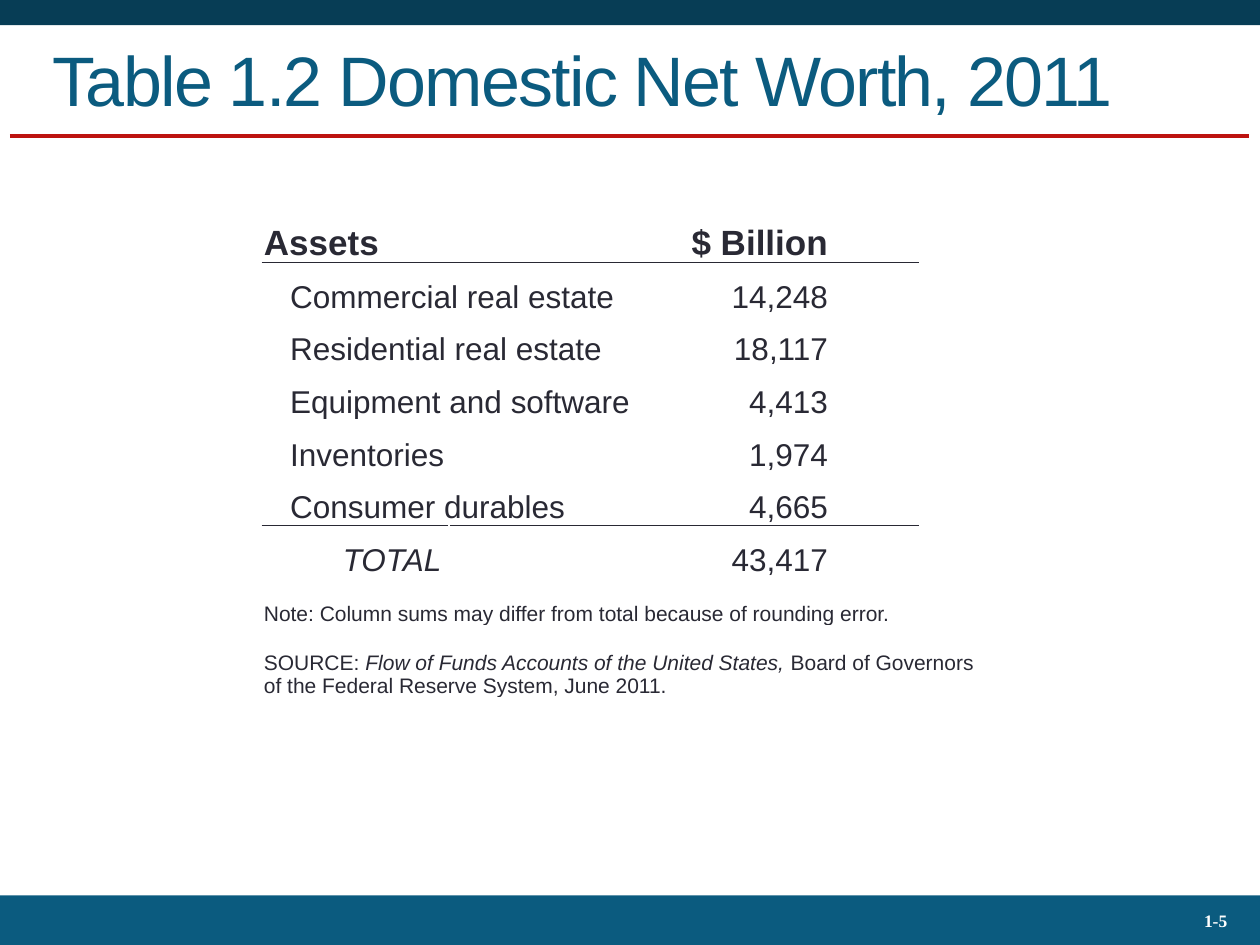
import lxml.etree
import pptx
import pptx.dml.color
import pptx.enum.shapes
import pptx.enum.text
import pptx.oxml.ns
import pptx.util
from pptx.util import Cm, Pt

NAVY = pptx.dml.color.RGBColor(0x07, 0x3D, 0x55)
BLUE = pptx.dml.color.RGBColor(0x0B, 0x5B, 0x7F)
RED = pptx.dml.color.RGBColor(0xBD, 0x13, 0x0F)
INK = pptx.dml.color.RGBColor(0x29, 0x29, 0x34)
WHITE = pptx.dml.color.RGBColor(0xFF, 0xFF, 0xFF)

ALIGN = pptx.enum.text.PP_ALIGN
MIDDLE = pptx.enum.text.MSO_ANCHOR.MIDDLE
BOTTOM = pptx.enum.text.MSO_ANCHOR.BOTTOM

ASSETS = [
    ("Commercial real estate", "14,248"),
    ("Residential real estate", "18,117"),
    ("Equipment and software", "4,413"),
    ("Inventories", "1,974"),
    ("Consumer durables", "4,665"),
]
NOTE = "Note: Column sums may differ from total because of rounding error."
SOURCE = [
    ("SOURCE: ", False),
    ("Flow of Funds Accounts of the United States,", True),
    (" Board of Governors of the Federal Reserve System, June 2011.", False),
]
COLUMN_WIDTHS = [3.76, 4.01, 3.66, 1.83, 1.14]
ROW_HEIGHTS = [1.06] * 7 + [0.97, 1.45]


def style_font(font, size, color, name="Arial", bold=False):
    font.size, font.name, font.bold = Pt(size), name, bold
    font.color.rgb = color


def add_band(page, left, top, width, height, color):
    band = page.shapes.add_shape(
        pptx.enum.shapes.MSO_SHAPE.RECTANGLE, left, top, width, height)
    band.shadow.inherit = False
    band.fill.solid()
    band.fill.fore_color.rgb = color
    band.line.fill.background()


def add_header(page, left, top, width):
    add_band(page, left, top, width, Cm(0.51), NAVY)
    rule = page.shapes.add_connector(
        pptx.enum.shapes.MSO_CONNECTOR.STRAIGHT,
        left + Cm(0.2), top + Cm(2.74), left + width - Cm(0.22), top + Cm(2.74))
    rule.line.color.rgb = RED
    rule.line.width = Pt(2.25)
    lxml.etree.SubElement(
        rule._element.spPr, pptx.oxml.ns.qn("a:effectLst"))

    title = page.shapes.title
    title.left, title.top = left + Cm(0.81), top + Cm(0.43)
    title.width, title.height = Cm(23.8), Cm(2.31)
    frame = title.text_frame
    frame.auto_size = pptx.enum.text.MSO_AUTO_SIZE.NONE
    frame.vertical_anchor = MIDDLE
    para = frame.paragraphs[0]
    para.alignment = ALIGN.LEFT
    style_font(para.font, 40, BLUE)
    span = para.add_run()
    span.text = "Table 1.2 Domestic Net Worth, 2011"
    span._r.get_or_add_rPr().set("spc", "-100")


def add_footer(page, left, top, width, height):
    add_band(page, left, top, width, height, BLUE)
    box = page.shapes.add_textbox(
        left + width - Cm(3.38), top + Cm(0.05), Cm(2.97), Cm(0.91))
    frame = box.text_frame
    frame.word_wrap = True
    frame.vertical_anchor = MIDDLE
    para = frame.paragraphs[0]
    para.text = "1-5"
    para.alignment = ALIGN.RIGHT
    style_font(para.font, 10, WHITE, "Times New Roman", True)


def write_cell(cell, spans, size=18, bold=False, indent=0.0, align=ALIGN.LEFT):
    cell.margin_left = Cm(0.03 + indent)
    para = cell.text_frame.paragraphs[0]
    para.alignment = align
    style_font(para.font, size, INK, bold=bold)
    for text, italic in spans:
        span = para.add_run()
        span.text = text
        span.font.italic = italic


def rule_cell(cell, side):
    edge = lxml.etree.Element(pptx.oxml.ns.qn(f"a:{side}"), w=str(Pt(1)))
    fill = lxml.etree.SubElement(edge, pptx.oxml.ns.qn("a:solidFill"))
    lxml.etree.SubElement(fill, pptx.oxml.ns.qn("a:srgbClr"), val=str(INK))
    cell._tc.get_or_add_tcPr().insert(0, edge)


def add_worth_table(page, left, top):
    table = page.shapes.add_table(
        len(ROW_HEIGHTS), len(COLUMN_WIDTHS), left, top,
        Cm(sum(COLUMN_WIDTHS)), Cm(sum(ROW_HEIGHTS))).table
    table.first_row = table.horz_banding = False
    for column, width in zip(table.columns, COLUMN_WIDTHS):
        column.width = Cm(width)
    for row, height in zip(table.rows, ROW_HEIGHTS):
        row.height = Cm(height)
    for cell in table.iter_cells():
        cell.fill.background()
        cell.margin_left = cell.margin_right = cell.margin_top = Cm(0.03)
        cell.margin_bottom = 0
        cell.vertical_anchor = BOTTOM

    total = len(ASSETS) + 1
    for row in (1, 2, 3, 5):
        table.cell(row, 0).merge(table.cell(row, 1))
    for row in (total + 1, total + 2):
        table.cell(row, 0).merge(table.cell(row, len(COLUMN_WIDTHS) - 1))
    for row, side in ((0, "lnB"), (1, "lnT"), (total - 1, "lnB"), (total, "lnT")):
        for column in range(4):
            rule_cell(table.cell(row, column), side)

    write_cell(table.cell(0, 0), [("Assets", False)], 20, True)
    write_cell(table.cell(0, 2), [("$ Billion", False)], 20, True, align=ALIGN.RIGHT)
    for row, (asset, amount) in enumerate(ASSETS, 1):
        write_cell(table.cell(row, 0), [(asset, False)], indent=0.53)
        write_cell(table.cell(row, 2), [(amount, False)], align=ALIGN.RIGHT)
    write_cell(table.cell(total, 0), [("TOTAL", True)], indent=1.59)
    write_cell(table.cell(total, 2), [("43,417", False)], align=ALIGN.RIGHT)
    write_cell(table.cell(total + 1, 0), [(NOTE, False)], 12)
    write_cell(table.cell(total + 2, 0), SOURCE, 12)


def main():
    deck = pptx.Presentation()
    deck.slide_width, deck.slide_height = Cm(25.4), Cm(19.05)
    page = deck.slides.add_slide(deck.slide_layouts.get_by_name("Title Only"))
    add_header(page, 0, 0, deck.slide_width)
    add_footer(page, 0, Cm(18.05), deck.slide_width, Cm(1))
    add_worth_table(page, Cm(5.29), Cm(4.23))
    deck.save("out.pptx")


if __name__ == "__main__":
    main()
